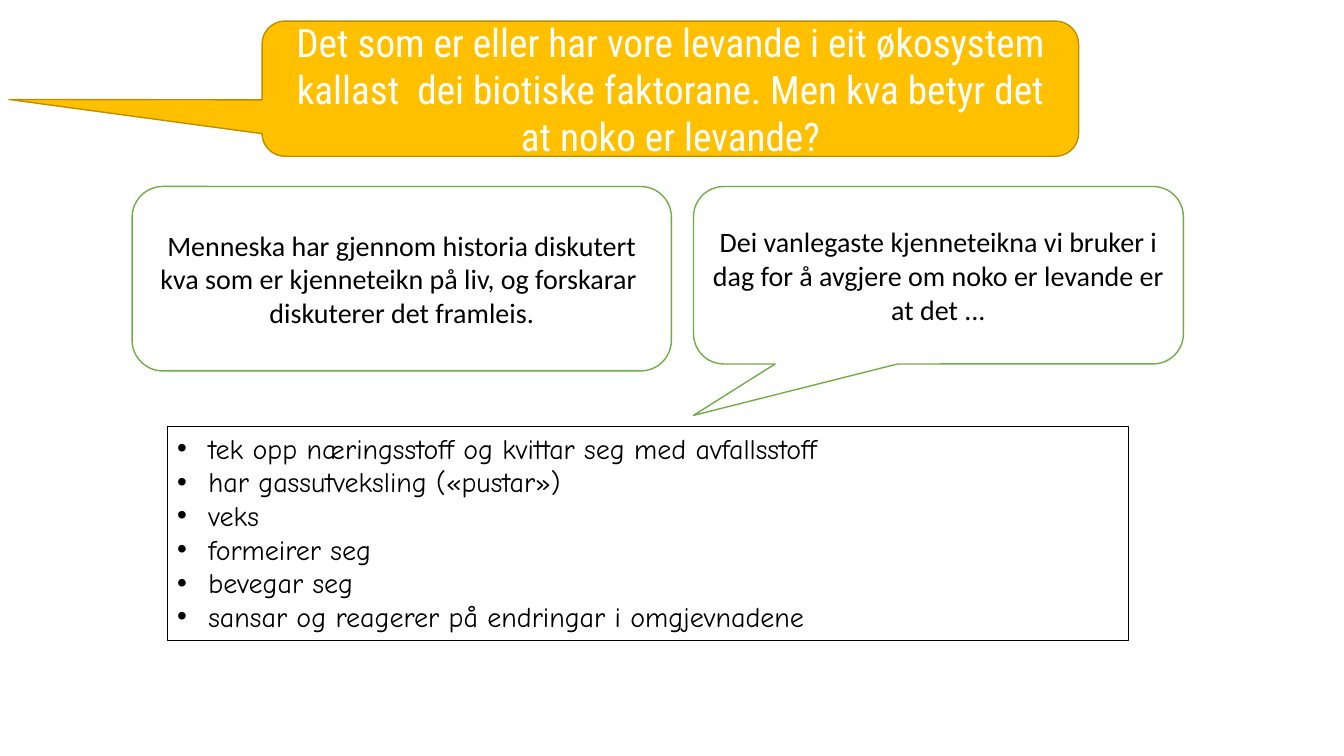
from lxml.etree import SubElement
from pptx import Presentation
from pptx.dml.color import RGBColor
from pptx.enum.shapes import MSO_SHAPE
from pptx.enum.text import MSO_ANCHOR, MSO_AUTO_SIZE, PP_ALIGN
from pptx.oxml.ns import qn
from pptx.util import Inches, Pt

WIDTH, HEIGHT = Inches(13.33), Inches(7.5)
COLORS = {
    "white": "FFFFFF",
    "black": "000000",
    "green": "70AD47",
    "amber": "FFC000",
    "dark_amber": "BD8E00",
}
QUESTION = (
    "Det som er eller har vore levande i eit økosystem kallast  dei biotiske "
    "faktorane. Men kva betyr det at noko er levande?"
)
HISTORY = (
    "Menneska har gjennom historia diskutert kva som er kjenneteikn på liv, "
    "og forskarar  diskuterer det framleis."
)
TODAY = (
    "Dei vanlegaste kjenneteikna vi bruker i dag for å avgjere om noko er "
    "levande er at det ..."
)
SIGNS_OF_LIFE = [
    "tek opp næringsstoff og kvittar seg med avfallsstoff",
    "har gassutveksling («pustar»)",
    "veks",
    "formeirer seg",
    "bevegar seg",
    "sansar og reagerer på endringar i omgjevnadene",
]


def color(name):
    return RGBColor.from_string(COLORS[name])


def area(left, top, width, height):
    return [
        round(percent * side / 100)
        for percent, side in zip((left, top, width, height), (WIDTH, HEIGHT) * 2)
    ]


def style_text(paragraph, font, size, ink):
    for run in paragraph.runs:
        run.font.name = font
        run.font.size = Pt(size)
        run.font.color.rgb = color(ink)


def add_bubble(slide, kind, place, text, adjustments=(), fill="white",
               line="green", font="Calibri", size=20, ink="black"):
    bubble = slide.shapes.add_shape(kind, *area(*place))
    for index, value in enumerate(adjustments):
        bubble.adjustments[index] = value
    bubble.shadow.inherit = False
    bubble.fill.solid()
    bubble.fill.fore_color.rgb = color(fill)
    bubble.line.color.rgb = color(line)
    bubble.line.width = Pt(1)
    frame = bubble.text_frame
    frame.word_wrap = True
    frame.vertical_anchor = MSO_ANCHOR.MIDDLE
    frame.text = text
    frame.paragraphs[0].alignment = PP_ALIGN.CENTER
    style_text(frame.paragraphs[0], font, size, ink)


def add_bullet(paragraph):
    indent = Inches(0.31)
    properties = paragraph._p.get_or_add_pPr()
    properties.set("marL", str(indent))
    properties.set("indent", str(-indent))
    SubElement(properties, qn("a:buFont")).set("typeface", "Arial")
    SubElement(properties, qn("a:buChar")).set("char", "•")


def add_bullet_list(slide, place, items):
    signs = slide.shapes.add_textbox(*area(*place))
    signs.line.color.rgb = color("black")
    signs.line.width = Pt(0.75)
    frame = signs.text_frame
    frame.word_wrap = True
    frame.auto_size = MSO_AUTO_SIZE.SHAPE_TO_FIT_TEXT
    frame.text = "\n".join(items)
    for paragraph in frame.paragraphs:
        add_bullet(paragraph)
        style_text(paragraph, "Comic Neue", 20, "black")


def main():
    presentation = Presentation()
    presentation.slide_width, presentation.slide_height = WIDTH, HEIGHT
    slide = presentation.slides.add_slide(presentation.slide_layouts[6])

    callout = MSO_SHAPE.ROUNDED_RECTANGULAR_CALLOUT
    add_bubble(slide, callout, (51.6, 24.67, 36.45, 23.47), TODAY,
               adjustments=(-0.5, 0.79, 0.17))
    add_bullet_list(slide, (12.45, 56.4, 71.55, 28.27), SIGNS_OF_LIFE)
    add_bubble(slide, MSO_SHAPE.ROUNDED_RECTANGLE,
               (9.83, 24.67, 40.13, 24.4), HISTORY)
    add_bubble(slide, callout, (19.5, 2.8, 60.75, 17.87), QUESTION,
               adjustments=(-0.81, 0.08, 0.17), fill="amber",
               line="dark_amber", font="Roboto Condensed", size=28, ink="white")

    presentation.save("out.pptx")


if __name__ == "__main__":
    main()
